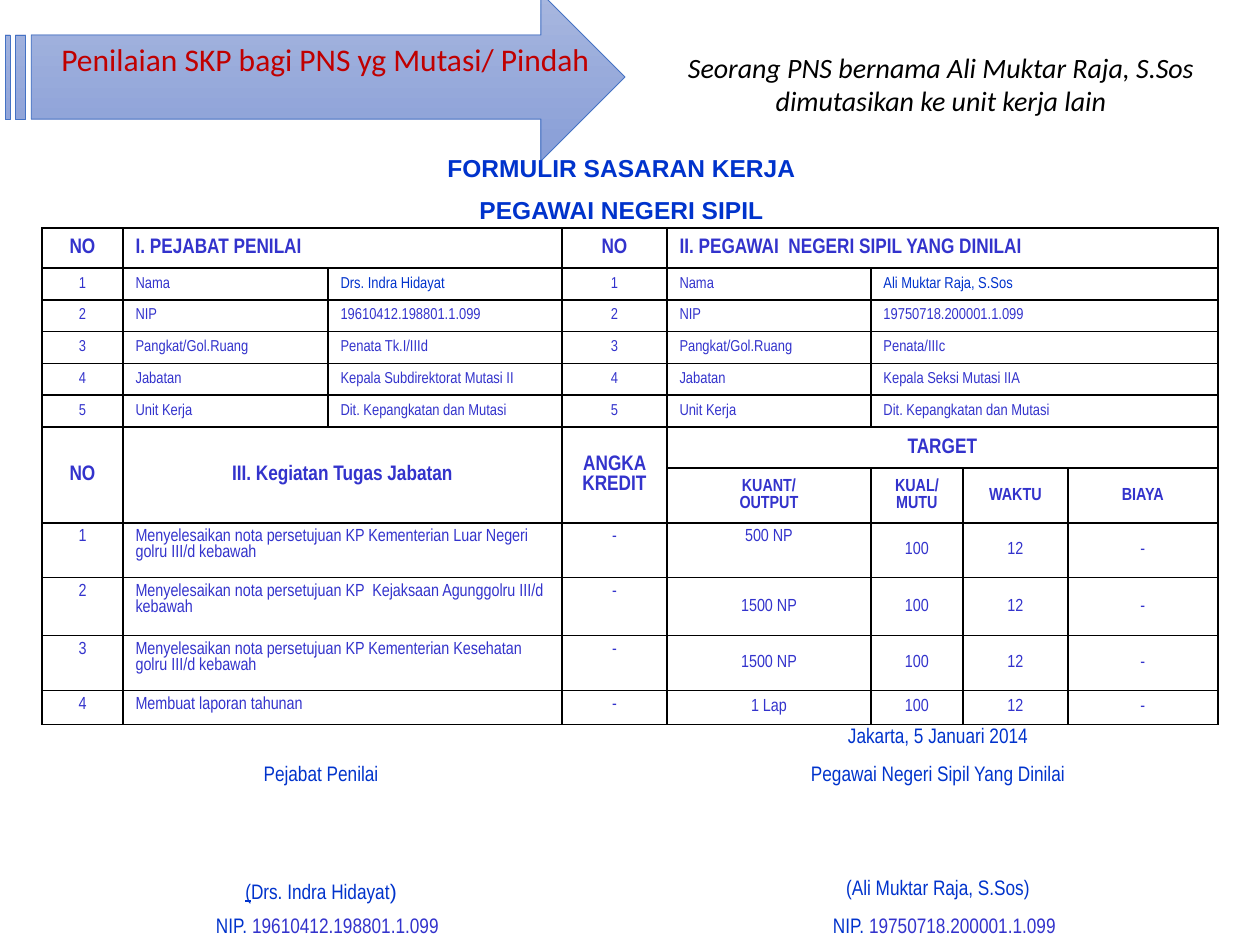
import lxml.etree
import pptx
import pptx.dml.color
import pptx.enum.shapes
import pptx.enum.text
import pptx.oxml.ns
import pptx.util

ALIGN = pptx.enum.text.PP_ALIGN
ANCHOR = pptx.enum.text.MSO_ANCHOR
RED = pptx.dml.color.RGBColor(0xC0, 0x00, 0x00)
BLACK = pptx.dml.color.RGBColor(0x00, 0x00, 0x00)
BLUE = pptx.dml.color.RGBColor(0x00, 0x33, 0xCC)
INDIGO = pptx.dml.color.RGBColor(0x33, 0x33, 0xCC)
ARROW_TOP = pptx.dml.color.RGBColor(0xA8, 0xB7, 0xDF)
ARROW_BOTTOM = pptx.dml.color.RGBColor(0x88, 0x9E, 0xD7)
ARROW_EDGE = pptx.dml.color.RGBColor(0x44, 0x72, 0xC4)
PX_PER_INCH = 126
NO_GRID_STYLE = "{2D5ABB26-0587-4C30-8999-92F81FD0307C}"


def px(length):
    return pptx.util.Emu(round(length * 914400 / PX_PER_INCH))


def font(name, size, color, **extra):
    return {"name": name, "size": pptx.util.Pt(size), "color": color, **extra}


TOPIC = font("Calibri", 18, RED)
CASE = font("Calibri", 16, BLACK, italic=True)
HEADING = font("Arial", 14, BLUE, bold=True)
SECTION = font("Arial Narrow", 12, INDIGO, bold=True)
SUBSECTION = font("Arial Narrow", 10, INDIGO, bold=True)
IDENTITY = font("Arial Narrow", 9, INDIGO)
PERSON = font("Arial Narrow", 9, BLUE)
TASK = font("Arial Narrow", 10, INDIGO)
SIGNATURE = font("Arial Narrow", 12, BLUE)

CENTERED = {"alignment": ALIGN.CENTER}
FLUSH_LEFT = {"alignment": ALIGN.LEFT}
JUSTIFIED = {"alignment": ALIGN.JUSTIFY}

FORM_COLUMNS = [81, 205, 234, 105, 204, 92, 105, 150]
FORM_ROWS = [40, 32, 31, 32, 31, 32, 41, 54, 54, 58, 54, 34]
IDENTITIES = [
    ("Nama", "Drs. Indra Hidayat", "Ali Muktar Raja, S.Sos"),
    ("NIP", "19610412.198801.1.099", "19750718.200001.1.099"),
    ("Pangkat/Gol.Ruang", "Penata Tk.I/IIId", "Penata/IIIc"),
    ("Jabatan", "Kepala Subdirektorat Mutasi II", "Kepala Seksi Mutasi IIA"),
    ("Unit Kerja", "Dit. Kepangkatan dan Mutasi", "Dit. Kepangkatan dan Mutasi"),
]
TASKS = [
    ("Menyelesaikan nota persetujuan KP Kementerian Luar Negeri golru III/d kebawah", "500 NP"),
    ("Menyelesaikan nota persetujuan KP  Kejaksaan Agunggolru III/d kebawah", "1500 NP"),
    ("Menyelesaikan nota persetujuan KP Kementerian Kesehatan golru III/d kebawah", "1500 NP"),
    ("Membuat laporan tahunan", "1 Lap"),
]


def add_run(paragraph, text, style):
    run = paragraph.add_run()
    run.text = text
    for attribute, value in style.items():
        if attribute == "color":
            run.font.color.rgb = value
        else:
            setattr(run.font, attribute, value)


def write(frame, text, style, layout):
    for index, line in enumerate(text.split("\n")):
        paragraph = frame.add_paragraph() if index else frame.paragraphs[0]
        for attribute, value in layout.items():
            setattr(paragraph, attribute, value)
        add_run(paragraph, line, style)


def add_label(slide, box, text, style):
    label = slide.shapes.add_textbox(*map(px, box)).text_frame
    label.word_wrap = True
    write(label, text, style, CENTERED)
    return label


def add_topic(slide, box):
    left, top, width, height = box
    arrow = slide.shapes.add_shape(
        pptx.enum.shapes.MSO_SHAPE.STRIPED_RIGHT_ARROW, *map(px, box))
    arrow.shadow.inherit = False
    arrow.fill.gradient()
    arrow.fill.gradient_angle = 270
    for stop, color in zip(arrow.fill.gradient_stops, (ARROW_TOP, ARROW_BOTTOM)):
        stop.color.rgb = color
    arrow.line.color.rgb = ARROW_EDGE
    arrow.line.width = pptx.util.Pt(0.5)

    topic = slide.shapes.title
    place = {"left": left + 32, "top": top + 41, "width": width - 43, "height": height - 79}
    for attribute, value in place.items():
        setattr(topic, attribute, px(value))
    topic.text_frame.auto_size = pptx.enum.text.MSO_AUTO_SIZE.NONE
    topic.text_frame.vertical_anchor = ANCHOR.TOP
    write(topic.text_frame, "Penilaian SKP bagi PNS yg Mutasi/ Pindah", TOPIC, CENTERED)
    arrow._element.addnext(topic._element)


def add_grid(slide, left, top, columns, rows):
    frame = slide.shapes.add_table(
        len(rows), len(columns), px(left), px(top), px(sum(columns)), px(sum(rows)))
    grid = frame.table
    grid.first_row = grid.horz_banding = False
    grid._tbl.tblPr.find(pptx.oxml.ns.qn("a:tableStyleId")).text = NO_GRID_STYLE
    for column, width in zip(grid.columns, columns):
        column.width = px(width)
    for row, height in zip(grid.rows, rows):
        row.height = px(height)
    return grid


def add_borders(cell):
    properties = cell._tc.get_or_add_tcPr()
    for index, side in enumerate(("a:lnL", "a:lnR", "a:lnT", "a:lnB")):
        line = lxml.etree.Element(pptx.oxml.ns.qn(side), w="12700")
        fill = lxml.etree.SubElement(line, pptx.oxml.ns.qn("a:solidFill"))
        lxml.etree.SubElement(fill, pptx.oxml.ns.qn("a:srgbClr"), val=str(BLACK))
        properties.insert(index, line)


def add_form(slide, left, top):
    form = add_grid(slide, left, top, FORM_COLUMNS, FORM_ROWS)
    for cell in form.iter_cells():
        cell.fill.background()
        add_borders(cell)

    def put(row, column, text, style, layout=CENTERED, span=(1, 1), anchor=ANCHOR.MIDDLE):
        cell = form.cell(row, column)
        if span != (1, 1):
            cell.merge(form.cell(row + span[0] - 1, column + span[1] - 1))
        cell.vertical_anchor = anchor
        write(cell.text_frame, text, style, layout)

    put(0, 0, "NO", SECTION)
    put(0, 1, "I. PEJABAT PENILAI", SECTION, JUSTIFIED, (1, 2))
    put(0, 3, "NO", SECTION)
    put(0, 4, "II. PEGAWAI  NEGERI SIPIL YANG DINILAI", SECTION, JUSTIFIED, (1, 4))
    for number, (field, assessor, employee) in enumerate(IDENTITIES, 1):
        value_style = PERSON if field == "Nama" else IDENTITY
        for start, value, width in ((0, assessor, 1), (3, employee, 3)):
            put(number, start, str(number), IDENTITY)
            put(number, start + 1, field, IDENTITY, JUSTIFIED)
            put(number, start + 2, value, value_style, FLUSH_LEFT, (1, width))

    put(6, 0, "NO", SECTION, span=(2, 1))
    put(6, 1, "III. Kegiatan Tugas Jabatan", SECTION, span=(2, 2))
    put(6, 3, "ANGKA KREDIT", SECTION, span=(2, 1))
    put(6, 4, "TARGET", SECTION, span=(1, 4))
    for column, target in enumerate(("KUANT/\nOUTPUT", "KUAL/ MUTU", "WAKTU", "BIAYA"), 4):
        put(7, column, target, SUBSECTION)
    for number, (task, output) in enumerate(TASKS, 1):
        row = number + 7
        put(row, 0, str(number), TASK, anchor=ANCHOR.TOP)
        put(row, 1, task, TASK, FLUSH_LEFT, (1, 2), ANCHOR.TOP)
        put(row, 3, "-", TASK, anchor=ANCHOR.TOP)
        put(row, 4, output, TASK, anchor=ANCHOR.TOP if number == 1 else ANCHOR.MIDDLE)
        for column, target in enumerate(("100", "12", "-"), 5):
            put(row, column, target, TASK)


def add_signatures(slide, left, top):
    signatures = add_grid(slide, left, top, [494, 123, 494], [38] * 6)
    for cell in signatures.iter_cells():
        cell.fill.background()
        cell.text_frame.paragraphs[0]._p.get_or_add_endParaRPr().set("sz", "1200")
    entries = [
        (0, 2, [("Jakarta, 5 Januari 2014", {})]),
        (1, 0, [("Pejabat Penilai", {})]),
        (1, 2, [("Pegawai Negeri Sipil Yang Dinilai", {})]),
        (4, 0, [("(", {"underline": True}), ("Drs. Indra Hidayat", {}), (")", {"name": "Arial"})]),
        (4, 2, [("(Ali Muktar Raja, S.Sos)", {})]),
        (5, 0, [("NIP. ", {}), (IDENTITIES[1][1], {"color": INDIGO})]),
        (5, 2, [("NIP. ", {}), (IDENTITIES[1][2], {"color": INDIGO})]),
    ]
    for row, column, parts in entries:
        cell = signatures.cell(row, column)
        paragraph = cell.text_frame.paragraphs[0]
        paragraph.alignment = ALIGN.JUSTIFY if row == 5 else ALIGN.CENTER
        if row == 5:
            cell.margin_left = px(142)
        for text, change in parts:
            add_run(paragraph, text, {**SIGNATURE, **change})


def main():
    deck = pptx.Presentation()
    deck.slide_width, deck.slide_height = px(1260), px(945)
    slide = deck.slides.add_slide(deck.slide_layouts[5])
    add_topic(slide, (5, -7, 620, 168))
    add_label(slide, (626, 44, 630, 81),
              "Seorang PNS bernama Ali Muktar Raja, S.Sos dimutasikan ke unit kerja lain", CASE)
    heading = add_label(slide, (319, 147, 605, 87),
                        "FORMULIR SASARAN KERJA\nPEGAWAI NEGERI SIPIL", HEADING)
    heading.paragraphs[1].space_before = pptx.util.Pt(7)
    add_form(slide, 42, 228)
    add_signatures(slide, 74, 722)
    deck.save("out.pptx")


if __name__ == "__main__":
    main()
